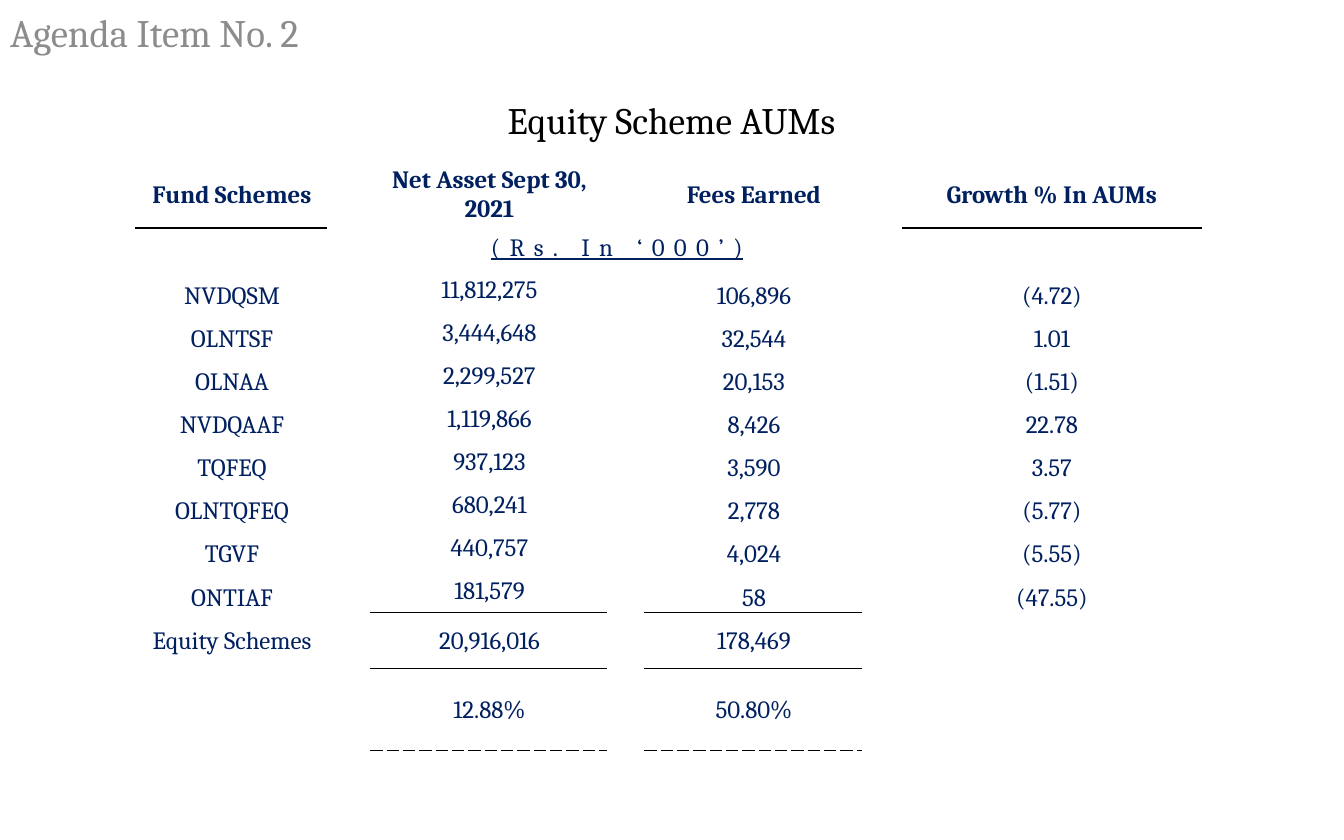
from dataclasses import dataclass

from lxml import etree
from pptx import Presentation
from pptx.dml.color import RGBColor
from pptx.enum.text import MSO_ANCHOR, PP_ALIGN
from pptx.oxml.ns import qn
from pptx.util import Pt

PX = 914400 // 112
LEFT, CENTER = PP_ALIGN.LEFT, PP_ALIGN.CENTER
TOP, MIDDLE, BOTTOM = MSO_ANCHOR.TOP, MSO_ANCHOR.MIDDLE, MSO_ANCHOR.BOTTOM


@dataclass(frozen=True)
class Theme:
    font: str = "Cambria"
    title: str = "8C8C8C"
    subtitle: str = "000000"
    body: str = "002060"
    paper: str = "FFFFFF"
    rule: str = "000000"
    title_pt: int = 25
    subtitle_pt: int = 24
    body_pt: int = 16


THEME = Theme()

# Table content: data columns alternate with narrow spacer columns
HEADERS = ["Fund Schemes", "Net Asset Sept 30, 2021", "Fees Earned", "Growth % In AUMs"]
UNIT = "(Rs. In ‘000’)"
FUNDS = [
    ["NVDQSM", "11,812,275", "106,896", "(4.72)"],
    ["OLNTSF", "3,444,648", "32,544", "1.01"],
    ["OLNAA", "2,299,527", "20,153", "(1.51)"],
    ["NVDQAAF", "1,119,866", "8,426", "22.78"],
    ["TQFEQ", "937,123", "3,590", "3.57"],
    ["OLNTQFEQ", "680,241", "2,778", "(5.77)"],
    ["TGVF", "440,757", "4,024", "(5.55)"],
    ["ONTIAF", "181,579", "58", "(47.55)"],
]
TOTALS = [
    ["Equity Schemes", "20,916,016", "178,469", ""],
    ["", "12.88%", "50.80%", ""],
]
ROWS = [HEADERS, ["", UNIT, "", ""], *FUNDS, *TOTALS]
COL_WIDTHS = [192, 43, 237, 37, 218, 40, 298]
ROW_HEIGHTS = [67, 40] + [43] * (len(FUNDS) - 1) + [44, 56, 82]

# Rules below a row: row -> (columns, width in points, dash)
LAST_FUND = 1 + len(FUNDS)
RULES = {
    0: ((0, 2, 4, 6), 1, "solid"),
    LAST_FUND: ((2, 4), 0.75, "solid"),
    LAST_FUND + 1: ((2, 4), 0.75, "solid"),
    LAST_FUND + 2: ((2, 4), 0.75, "sysDash"),
}


def style(p, size, color, align, bold=False):
    p.alignment = align
    p.font.name = THEME.font
    p.font.size = Pt(size)
    p.font.bold = bold
    p.font.color.rgb = RGBColor.from_string(color)


def fill_frame(sp, text, size, color, align, anchor):
    tf = sp.text_frame
    tf.word_wrap = True
    tf.vertical_anchor = anchor
    p = tf.paragraphs[0]
    p.text = text
    p.line_spacing = 0.9
    style(p, size, color, align)


def add_title(slide, text):
    sp = slide.shapes.title
    sp.left, sp.top, sp.width, sp.height = -PX, 0, 700 * PX, 69 * PX
    fill_frame(sp, text, THEME.title_pt, THEME.title, LEFT, MIDDLE)


def add_subtitle(slide, text):
    sp = slide.shapes.add_textbox(92 * PX, 97 * PX, 1159 * PX, 65 * PX)
    fill_frame(sp, text, THEME.subtitle_pt, THEME.subtitle, CENTER, TOP)


def add_border(cell, side, color, width, dash):
    ln = etree.SubElement(cell._tc.get_or_add_tcPr(), qn(f"a:ln{side}"), w=str(Pt(width)))
    fill = etree.SubElement(ln, qn("a:solidFill"))
    etree.SubElement(fill, qn("a:srgbClr"), val=color)
    etree.SubElement(ln, qn("a:prstDash"), val=dash)


def rule_below(row, col):
    cols, width, dash = RULES.get(row, ((), 1, "solid"))
    if col in cols:
        return THEME.rule, width, dash
    return THEME.paper, 3 if row == 0 else 1, "solid"


def format_cell(cell, row, col):
    plain = (THEME.paper, 1, "solid")
    borders = {"L": plain, "R": plain, "T": rule_below(row - 1, col), "B": rule_below(row, col)}
    # The merged unit cell takes its top rules from the header cells above
    if row == 1 and 2 <= col <= 4:
        del borders["T"]
    for side, border in borders.items():
        add_border(cell, side, *border)
    cell.fill.solid()
    cell.fill.fore_color.rgb = RGBColor.from_string(THEME.paper)
    cell.margin_left = cell.margin_right = cell.margin_top = PX
    cell.margin_bottom = 0
    is_fund = 2 <= row <= LAST_FUND
    cell.vertical_anchor = BOTTOM if is_fund and col != 2 else MIDDLE
    style(cell.text_frame.paragraphs[0], THEME.body_pt, THEME.body, CENTER, bold=row == 0)


def add_fund_table(slide):
    frame = slide.shapes.add_table(
        len(ROWS), len(COL_WIDTHS), 136 * PX, 161 * PX,
        sum(COL_WIDTHS) * PX, sum(ROW_HEIGHTS) * PX)
    table = frame.table
    table.first_row = table.horz_banding = False
    for column, width in zip(table.columns, COL_WIDTHS):
        column.width = width * PX
    for r, (values, height) in enumerate(zip(ROWS, ROW_HEIGHTS)):
        table.rows[r].height = height * PX
        for c in range(len(COL_WIDTHS)):
            cell = table.cell(r, c)
            if c % 2 == 0 and values[c // 2]:
                cell.text = values[c // 2]
            format_cell(cell, r, c)

    # Unit line spans both amount columns
    unit = table.cell(1, 2)
    unit.merge(table.cell(1, 4))
    run = unit.text_frame.paragraphs[0].runs[0]
    run.font.underline = True
    run.font._element.set("spc", "600")


def main():
    prs = Presentation()
    prs.slide_width, prs.slide_height = 1344 * PX, 840 * PX
    slide = prs.slides.add_slide(prs.slide_layouts[5])
    add_title(slide, "Agenda Item No. 2")
    add_subtitle(slide, "Equity Scheme AUMs")
    add_fund_table(slide)
    prs.save("out.pptx")


if __name__ == "__main__":
    main()
